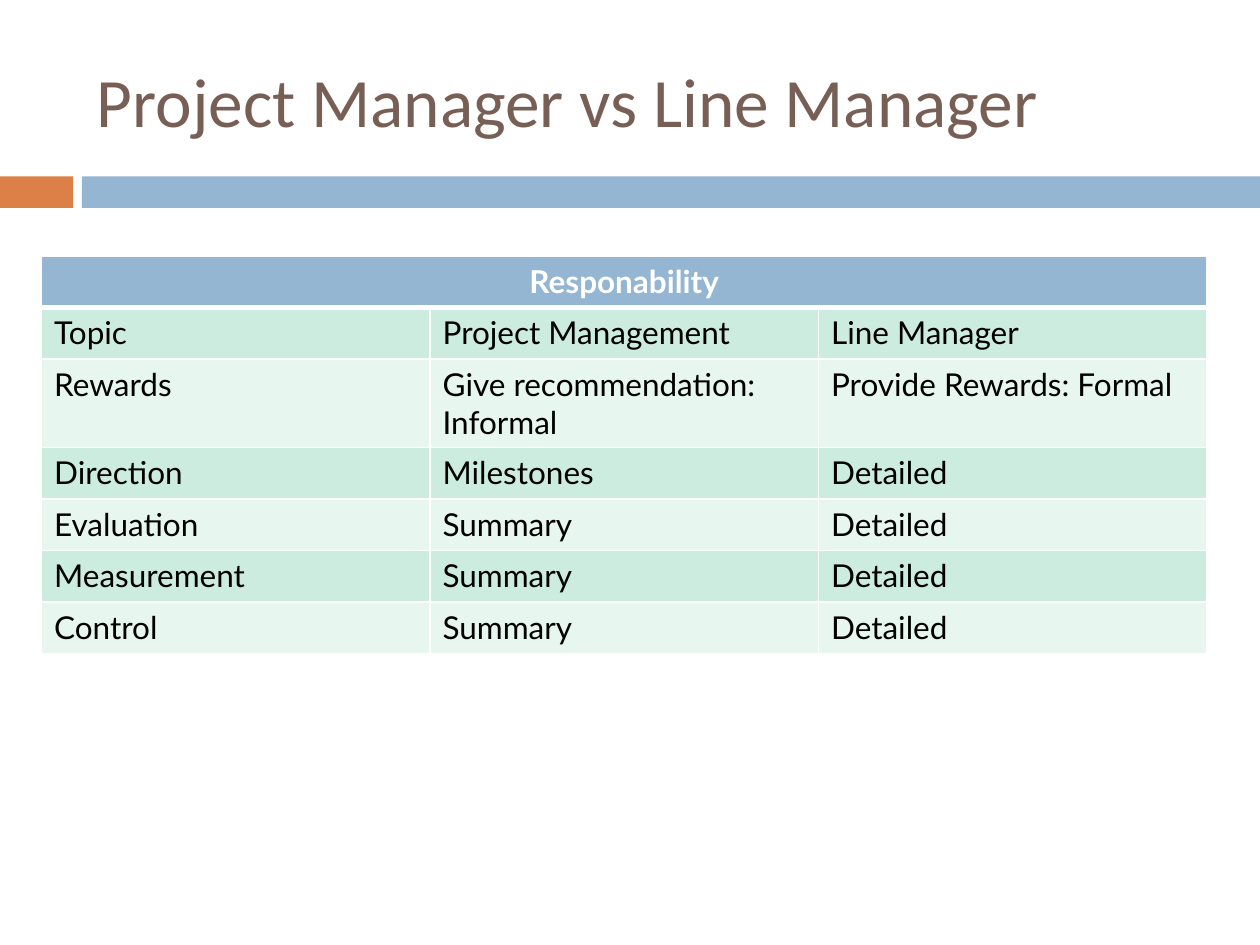
from lxml import etree
from pptx import Presentation
from pptx.dml.color import RGBColor
from pptx.enum.shapes import MSO_SHAPE
from pptx.enum.text import MSO_ANCHOR, PP_ALIGN
from pptx.oxml.ns import qn
from pptx.util import Inches, Pt

RECTANGLE = MSO_SHAPE.RECTANGLE
MIDDLE = MSO_ANCHOR.MIDDLE
LEFT, CENTER = PP_ALIGN.LEFT, PP_ALIGN.CENTER

ORANGE = RGBColor(0xDD, 0x80, 0x47)
BLUE = RGBColor(0x94, 0xB6, 0xD2)
BROWN = RGBColor(0x77, 0x5F, 0x55)
GREEN = RGBColor(0xCB, 0xEC, 0xDE)
PALE_GREEN = RGBColor(0xE7, 0xF6, 0xEF)
WHITE = RGBColor(0xFF, 0xFF, 0xFF)
BLACK = RGBColor(0x00, 0x00, 0x00)

TABLE_HEADING = "Responability"
TABLE_ROWS = [
    ("Topic", "Project Management", "Line Manager"),
    ("Rewards", "Give recommendation: Informal", "Provide Rewards: Formal"),
    ("Direction", "Milestones", "Detailed"),
    ("Evaluation", "Summary", "Detailed"),
    ("Measurement", "Summary", "Detailed"),
    ("Control", "Summary", "Detailed"),
]
ROW_HEIGHTS = [0.41, 0.41, 0.7, 0.41, 0.41, 0.41, 0.41]


def style_text(frame, font_name, size, color, bold=False, align=LEFT):
    for para in frame.paragraphs:
        para.alignment = align
        for span in para.runs:
            span.font.name = font_name
            span.font.size = Pt(size)
            span.font.bold = bold
            span.font.color.rgb = color


def add_bar(page, left, width, color):
    bar = page.shapes.add_shape(
        RECTANGLE, Inches(left), Inches(1.4), Inches(width), Inches(0.25))
    bar.shadow.inherit = False
    bar.fill.solid()
    bar.fill.fore_color.rgb = color
    bar.line.fill.background()


def add_title(page, text):
    box = page.shapes.add_textbox(
        Inches(0.67), Inches(0.25), Inches(8.92), Inches(1.08))
    frame = box.text_frame
    frame.word_wrap = True
    frame.vertical_anchor = MIDDLE
    frame.text = text
    style_text(frame, "Calibri", 39.6, BROWN)


def set_borders(cell, top=1, bottom=1):
    properties = cell._tc.get_or_add_tcPr()
    for side, width in (("L", 1), ("R", 1), ("T", top), ("B", bottom)):
        line = etree.SubElement(properties, qn(f"a:ln{side}"), w=str(Pt(width)))
        fill = etree.SubElement(line, qn("a:solidFill"))
        etree.SubElement(fill, qn("a:srgbClr"), val=str(WHITE))


def fill_cell(cell, color):
    cell.fill.solid()
    cell.fill.fore_color.rgb = color


def add_comparison_table(page):
    columns = len(TABLE_ROWS[0])
    table = page.shapes.add_table(
        len(ROW_HEIGHTS), columns, Inches(0.33), Inches(2.03),
        Inches(9.25), Inches(sum(ROW_HEIGHTS))).table
    for row, height in zip(table.rows, ROW_HEIGHTS):
        row.height = Inches(height)

    # Heading across all columns
    heading = table.cell(0, 0)
    heading.merge(table.cell(0, columns - 1))
    for cell in table.rows[0].cells:
        set_borders(cell, bottom=3)
        fill_cell(cell, BLUE)
    heading.text_frame.text = TABLE_HEADING
    style_text(heading.text_frame, "Lato", 18, WHITE, bold=True, align=CENTER)

    # Banded rows
    for row_number, texts in enumerate(TABLE_ROWS, start=1):
        for column, text in enumerate(texts):
            cell = table.cell(row_number, column)
            set_borders(cell, top=3 if row_number == 1 else 1)
            fill_cell(cell, GREEN if row_number % 2 else PALE_GREEN)
            cell.text_frame.text = text
            style_text(cell.text_frame, "Lato", 18, BLACK)


def main():
    deck = Presentation()
    deck.slide_width, deck.slide_height = Inches(10), Inches(7.5)
    page = deck.slides.add_slide(deck.slide_layouts[6])
    add_bar(page, 0, 0.58, ORANGE)
    add_bar(page, 0.65, 9.35, BLUE)
    add_title(page, "Project Manager vs Line Manager")
    add_comparison_table(page)
    deck.save("out.pptx")


if __name__ == "__main__":
    main()
